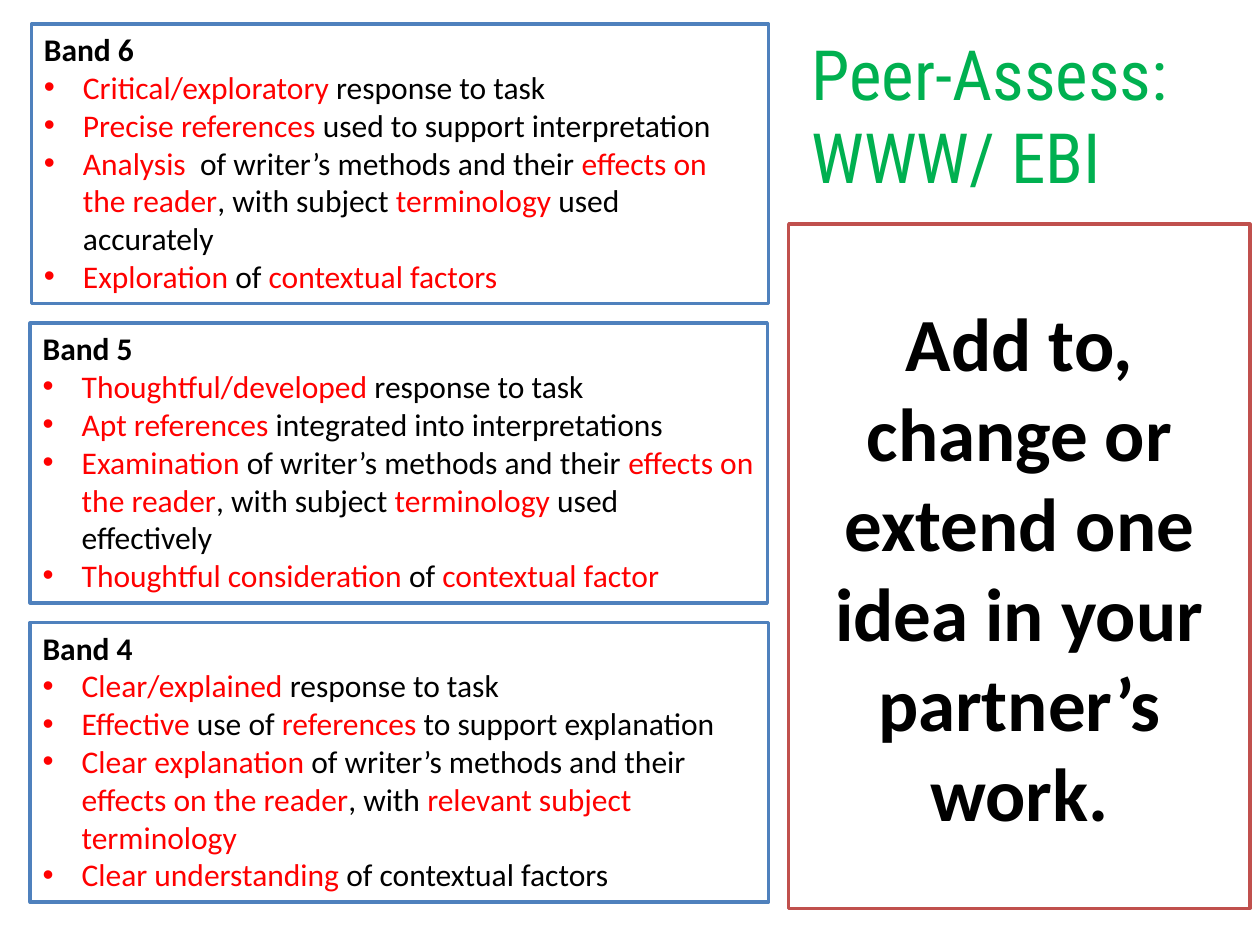
from typing import NamedTuple

from lxml.etree import SubElement
from pptx import Presentation
from pptx.dml.color import RGBColor
from pptx.enum.shapes import MSO_SHAPE
from pptx.enum.text import MSO_ANCHOR, MSO_AUTO_SIZE, PP_ALIGN
from pptx.oxml.ns import qn
from pptx.util import Inches, Pt

BLACK, WHITE, RED = "000000", "FFFFFF", "FF0000"
GREEN, BLUE, BRICK = "00B050", "4F81BD", "C0504D"

BAND_TOP, BAND_STEP, BAND_HEIGHT = 0.19, 2.375, 2.22
BULLET_INDENT = 0.31


class Band(NamedTuple):
    heading: str
    left: float
    width: float
    criteria: list[str]  # key words stand between asterisks


BANDS = [
    Band("Band 6", 0.25, 5.85, [
        "*Critical/exploratory *response to task",
        "*Precise references *used to support interpretation",
        "*Analysis  *of writer’s methods and their *effects on the reader*"
        ", with subject *terminology *used accurately",
        "*Exploration* of *contextual factors*",
    ]),
    Band("Band 5", 0.24, 5.85, [
        "*Thoughtful/developed *response to task",
        "*Apt references *integrated into interpretations",
        "*Examination *of writer’s methods and their *effects on the reader*"
        ", with subject *terminology* used effectively",
        "*Thoughtful consideration *of *contextual factor*",
    ]),
    Band("Band 4", 0.24, 5.86, [
        "*Clear/explained* response to task",
        "*Effective* use of *references* to support explanation",
        "*Clear explanation *of writer’s methods and their "
        "*effects on the reader*, with *relevant subject terminology*",
        "*Clear understanding *of contextual factors",
    ]),
]


def color(value: str) -> RGBColor:
    return RGBColor.from_string(value)


def fill(shape, value: str) -> None:
    shape.fill.solid()
    shape.fill.fore_color.rgb = color(value)


def place(shape, left: float, top: float, width: float, height: float) -> None:
    shape.left, shape.top = Inches(left), Inches(top)
    shape.width, shape.height = Inches(width), Inches(height)


def format_run(run, size: float, value: str, bold: bool = False,
               font_name: str = "Calibri") -> None:
    run.font.name = font_name
    run.font.size = Pt(size)
    run.font.bold = bold
    run.font.color.rgb = color(value)


def add_box(slide, left: float, top: float, width: float, height: float,
            outline: str, anchor: MSO_ANCHOR):
    shape = slide.shapes.add_shape(
        MSO_SHAPE.RECTANGLE, Inches(left), Inches(top), Inches(width), Inches(height))
    shape.shadow.inherit = False
    fill(shape, WHITE)
    shape.line.color.rgb = color(outline)
    shape.line.width = Pt(2)
    shape.text_frame.word_wrap = True
    shape.text_frame.vertical_anchor = anchor
    return shape


def add_bullet(paragraph) -> None:
    properties = paragraph._p.get_or_add_pPr()
    properties.set("marL", str(Inches(BULLET_INDENT)))
    properties.set("indent", str(-Inches(BULLET_INDENT)))
    SubElement(properties, qn("a:buFont")).set("typeface", "Arial")
    SubElement(properties, qn("a:buChar")).set("char", "•")


def add_band(slide, band: Band, top: float) -> None:
    shape = add_box(slide, band.left, top, band.width, BAND_HEIGHT, BLUE, MSO_ANCHOR.TOP)
    text_frame = shape.text_frame
    text_frame.text = band.heading
    heading = text_frame.paragraphs[0]
    heading.alignment = PP_ALIGN.LEFT
    format_run(heading.runs[0], 18, BLACK, bold=True)

    for criterion in band.criteria:
        paragraph = text_frame.add_paragraph()
        paragraph.alignment = PP_ALIGN.LEFT
        add_bullet(paragraph)
        for index, part in enumerate(criterion.split("*")):
            if part:
                run = paragraph.add_run()
                run.text = part
                format_run(run, 18, RED if index % 2 else BLACK)


def add_title(slide) -> None:
    title = slide.shapes.title
    place(title, 6.34, 0.36, 3.46, 1.1)
    fill(title, WHITE)
    text_frame = title.text_frame
    text_frame.text = "Peer-Assess: WWW/ EBI"
    text_frame.word_wrap = True
    text_frame.auto_size = MSO_AUTO_SIZE.NONE
    text_frame.vertical_anchor = MSO_ANCHOR.MIDDLE
    paragraph = text_frame.paragraphs[0]
    paragraph.alignment = PP_ALIGN.LEFT
    format_run(paragraph.runs[0], 39.6, GREEN, font_name="Roboto Condensed")


def add_task(slide) -> None:
    shape = add_box(slide, 6.26, 1.78, 3.66, 5.43, BRICK, MSO_ANCHOR.MIDDLE)
    shape.text_frame.text = "Add to, change or extend one idea in your partner’s work."
    paragraph = shape.text_frame.paragraphs[0]
    paragraph.alignment = PP_ALIGN.CENTER
    format_run(paragraph.runs[0], 42.9, BLACK, bold=True)


def main() -> None:
    presentation = Presentation()
    presentation.slide_width, presentation.slide_height = Inches(10), Inches(7.5)
    slide = presentation.slides.add_slide(presentation.slide_layouts[5])

    # Title
    add_title(slide)

    # Mark bands, stacked on the left
    for index, band in enumerate(BANDS):
        add_band(slide, band, BAND_TOP + index * BAND_STEP)

    # Task on the right
    add_task(slide)

    presentation.save("out.pptx")


if __name__ == "__main__":
    main()
